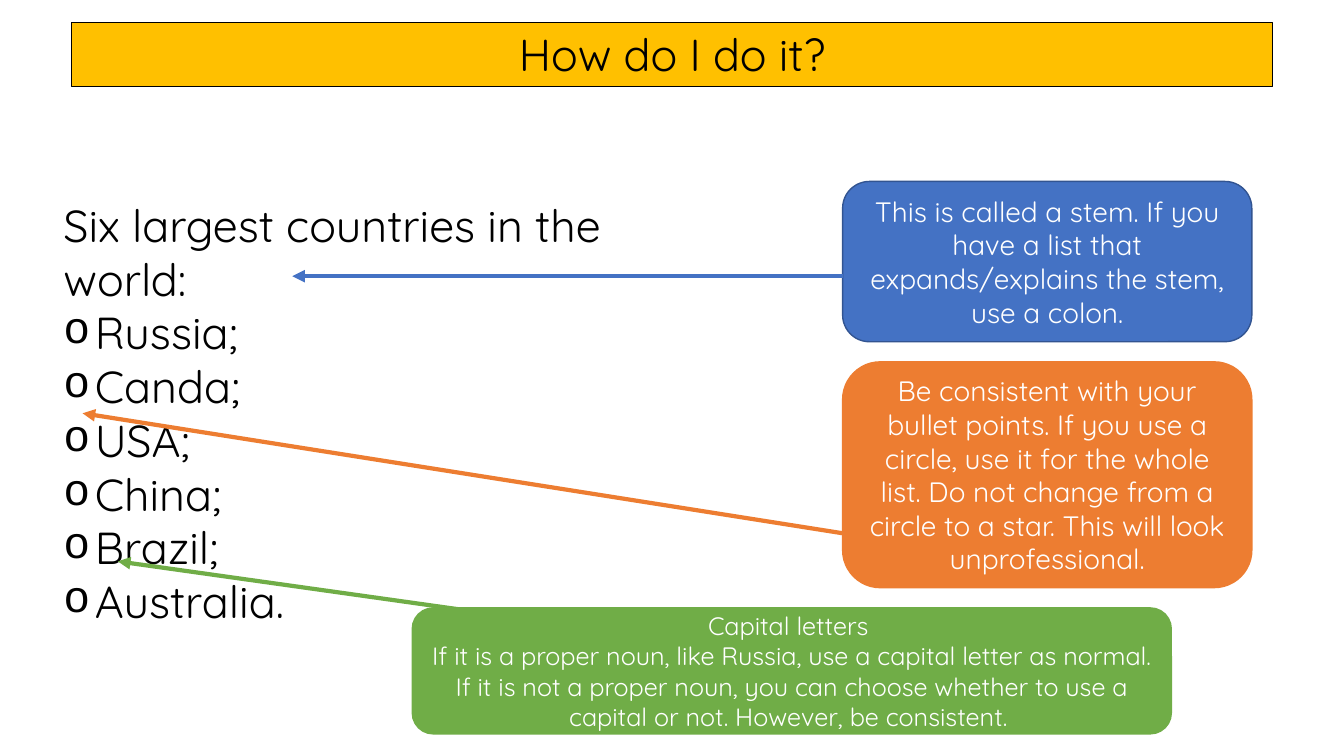
from pptx import Presentation
from pptx.util import Pt
from pptx.dml.color import RGBColor
from pptx.enum.shapes import MSO_SHAPE, MSO_CONNECTOR
from pptx.enum.text import PP_ALIGN, MSO_ANCHOR
from pptx.oxml.ns import qn
from lxml.etree import SubElement

# Content
FONT = "Quicksand"
COLORS = {
    "white": "FFFFFF", "black": "000000", "gold": "FFC000",
    "blue": "4472C4", "navy": "325491", "orange": "ED7D31", "green": "70AD47",
}
TITLE = "How do I do it?"
STEM = "Six largest countries in the world:"
LANDS = ["Russia;", "Canda;", "USA;", "China;", "Brazil;", "Australia."]
# Each callout: fill, line, box, text size, paragraphs, arrow start and end
CALLOUTS = [
    ("blue", "navy", (601.9, 129.6, 292.3, 114.5), 20,
     ["This is called a stem. If you have a list that expands/explains "
      "the stem, use a colon."],
     (601.9, 197.3), (208.8, 197.3)),
    ("orange", "orange", (601.9, 258.5, 292.3, 161.3), 20,
     ["Be consistent with your bullet points. If you use a circle, use it "
      "for the whole list. Do not change from a circle to a star. "
      "This will look unprofessional."],
     (601.9, 380.9), (59, 295.2)),
    ("green", "green", (294.5, 434.2, 542.2, 90), 18,
     ["Capital letters ",
      "If it is a proper noun, like Russia, use a capital letter as normal. "
      "If it is not a proper noun, you can choose whether to use a capital "
      "or not. However, be consistent. "],
     (330.5, 435.6), (84.2, 401)),
]


def color(name):
    return RGBColor.from_string(COLORS[name])


def add_box(slide, kind, box, fill, line, width, lines, size, ink, align, anchor):
    shape = slide.shapes.add_shape(kind, *map(Pt, box))
    shape.shadow.inherit = False
    shape.fill.solid()
    shape.fill.fore_color.rgb = color(fill)
    shape.line.color.rgb = color(line)
    shape.line.width = Pt(width)
    frame = shape.text_frame
    frame.word_wrap = True
    frame.vertical_anchor = anchor
    frame.text = "\n".join(lines)
    for para in frame.paragraphs:
        para.alignment = align
        for run in para.runs:
            run.font.name = FONT
            run.font.size = Pt(size)
            run.font.color.rgb = color(ink)
    return shape


def add_bullet(para, indent):
    props = para._p.get_or_add_pPr()
    props.set("marL", str(Pt(indent)))
    props.set("indent", str(-Pt(indent)))
    SubElement(props, qn("a:buFont")).set("typeface", "Courier New")
    SubElement(props, qn("a:buChar")).set("char", "o")


def add_arrow(slide, start, end, ink):
    arrow = slide.shapes.add_connector(
        MSO_CONNECTOR.STRAIGHT, *map(Pt, start + end))
    arrow.line.color.rgb = color(ink)
    arrow.line.width = Pt(3)
    SubElement(arrow.line._get_or_add_ln(), qn("a:tailEnd")).set("type", "triangle")
    SubElement(arrow._element.spPr, qn("a:effectLst"))


def main():
    deck = Presentation()
    deck.slide_width, deck.slide_height = Pt(960), Pt(540)
    slide = deck.slides.add_slide(deck.slide_layouts[6])

    # Stem and list of countries
    panel = add_box(slide, MSO_SHAPE.RECTANGLE, (38.2, 137.5, 402.5, 317.5),
                    "white", "white", 0.75, [STEM] + LANDS, 32, "black",
                    PP_ALIGN.LEFT, MSO_ANCHOR.TOP)
    for para in panel.text_frame.paragraphs[1:]:
        add_bullet(para, 22.5)

    # Title bar
    add_box(slide, MSO_SHAPE.RECTANGLE, (51.1, 15.8, 858.2, 46.1),
            "gold", "black", 0.75, [TITLE], 32, "black",
            PP_ALIGN.CENTER, MSO_ANCHOR.TOP)

    # Callouts with their arrows
    for fill, line, box, size, lines, start, end in CALLOUTS:
        add_box(slide, MSO_SHAPE.ROUNDED_RECTANGLE, box, fill, line, 1,
                lines, size, "white", PP_ALIGN.CENTER, MSO_ANCHOR.MIDDLE)
        add_arrow(slide, start, end, fill)

    deck.save("out.pptx")


if __name__ == "__main__":
    main()
